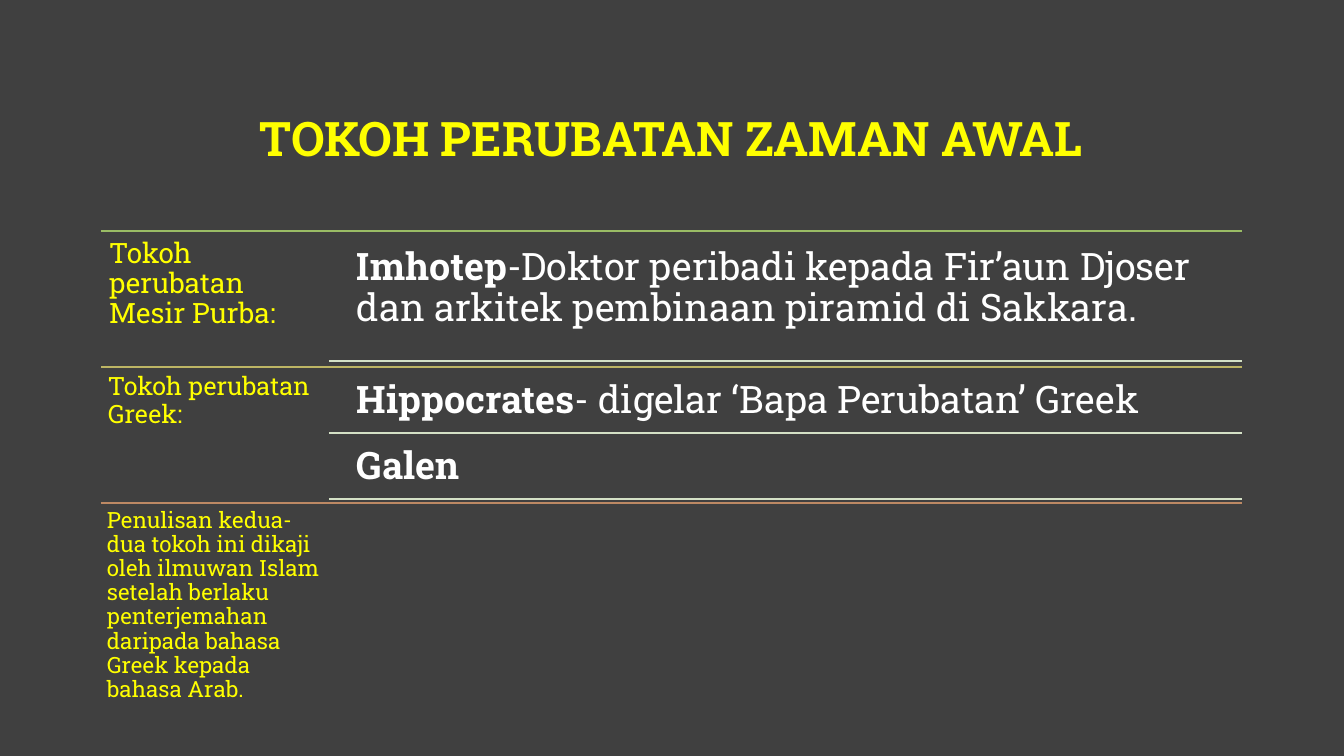
from pptx import Presentation
from pptx.dml.color import RGBColor
from pptx.enum.shapes import MSO_CONNECTOR
from pptx.enum.text import MSO_ANCHOR, PP_ALIGN
from pptx.oxml.ns import qn
from pptx.util import Pt
from lxml import etree

PX = 914400 / 100.8
LEFT, RIGHT = 101, 1242
DETAIL_LEFT, DETAIL_LINE_LEFT = 346, 329
YELLOW, WHITE, PALE_GREEN = "FFFF00", "FFFFFF", "D4E1C6"


def add_text(text, left, top, width, height, size, color, bold_lead="", inset=10,
             align=PP_ALIGN.LEFT, anchor=MSO_ANCHOR.TOP):
    """Add a text box whose bold_lead comes before the regular text."""
    box = slide.shapes.add_textbox(*(round(n * PX) for n in (left, top, width, height)))
    frame = box.text_frame
    frame.word_wrap = True
    frame.vertical_anchor = anchor
    frame.margin_left = frame.margin_right = round(inset * PX)
    frame.margin_top = frame.margin_bottom = round(inset * PX)
    paragraph = frame.paragraphs[0]
    paragraph.alignment = align
    paragraph.line_spacing = 0.9
    for words, bold in ((bold_lead, True), (text, False)):
        if words:
            run = paragraph.add_run()
            run.text = words
            run.font.name = "Roboto Slab"
            run.font.size = Pt(size)
            run.font.bold = bold
            run.font.color.rgb = RGBColor.from_string(color)


def add_rule(left, y, color, weight):
    """Add a horizontal line from left to the right margin."""
    line = slide.shapes.add_connector(
        MSO_CONNECTOR.STRAIGHT, *(round(n * PX) for n in (left, y, RIGHT, y)))
    line.line.color.rgb = RGBColor.from_string(color)
    line.line.width = Pt(weight)
    etree.SubElement(line._element.spPr, qn("a:effectLst"))


presentation = Presentation()
presentation.slide_width = round(1344 * PX)
presentation.slide_height = round(756 * PX)
slide = presentation.slides.add_slide(presentation.slide_layouts[6])
slide.background.fill.solid()
slide.background.fill.fore_color.rgb = RGBColor.from_string("404040")

add_text("", LEFT, 68, RIGHT - LEFT, 146, 34, YELLOW,
         bold_lead="TOKOH PERUBATAN ZAMAN AWAL",
         align=PP_ALIGN.CENTER, anchor=MSO_ANCHOR.MIDDLE)

# Section: top, line colour, label, label size, label inset
sections = [
    (231, "9ABC65", "Tokoh perubatan Mesir Purba:", 20, 8),
    (367, "BDB564", "Tokoh perubatan Greek:", 18, 7),
    (503, "BD8964", "Penulisan kedua-dua tokoh ini dikaji oleh ilmuwan Islam setelah "
     "berlaku penterjemahan daripada bahasa Greek kepada bahasa Arab.", 16, 6),
]
for top, color, label, size, inset in sections:
    add_rule(LEFT, top, color, 1)
    add_text(label, LEFT, top, 228, 136, size, YELLOW, inset=inset)

# Figure: top, bottom line, name, description
figures = [
    (237, 361, "Imhotep",
     "-Doktor peribadi kepada Fir’aun Djoser dan arkitek pembinaan piramid di Sakkara."),
    (370, 433, "Hippocrates", "- digelar ‘Bapa Perubatan’ Greek"),
    (436, 499, "Galen", ""),
]
for top, bottom, name, description in figures:
    add_text(description, DETAIL_LEFT, top, RIGHT - DETAIL_LEFT, bottom - top, 27, WHITE,
             bold_lead=name, inset=11)
    add_rule(DETAIL_LINE_LEFT, bottom, PALE_GREEN, 1.5)

presentation.save("out.pptx")
